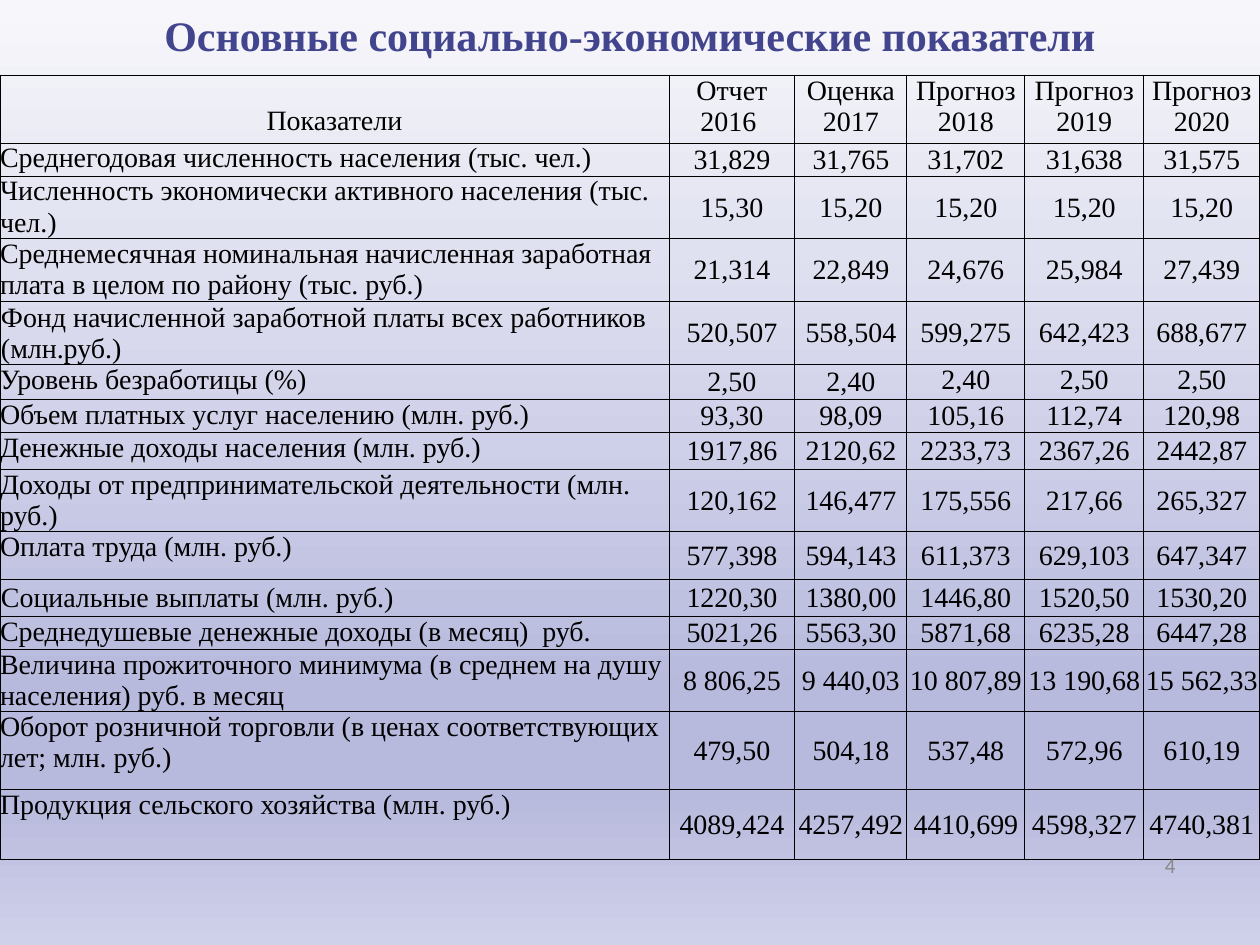
from lxml import etree
from pptx import Presentation
from pptx.dml.color import RGBColor
from pptx.enum.text import MSO_ANCHOR, MSO_AUTO_SIZE, PP_ALIGN
from pptx.oxml.ns import qn
from pptx.util import Pt

TOP, MIDDLE, BOTTOM = MSO_ANCHOR.TOP, MSO_ANCHOR.MIDDLE, MSO_ANCHOR.BOTTOM
LEFT, CENTER = PP_ALIGN.LEFT, PP_ALIGN.CENTER
PX = 914400 // 126
SERIF = "Times New Roman"
COLORS = {"title": "42458D", "text": "000000", "border": "000000", "number": "888888"}
BACKGROUND = [(0, "F7F7FB"), (74, "B7B9DD"), (83, "B7B9DD"), (100, "CFD0E9")]

HEADER = ["Показатели", "Отчет\n2016 ", "Оценка 2017", "Прогноз 2018", "Прогноз 2019", "Прогноз 2020"]
INDICATORS = [
    ("Среднегодовая численность населения (тыс. чел.)",
     "31,829", "31,765", "31,702", "31,638", "31,575"),
    ("Численность экономически активного населения (тыс. чел.)",
     "15,30", "15,20", "15,20", "15,20", "15,20"),
    ("Среднемесячная номинальная начисленная заработная плата в целом по району (тыс. руб.)",
     "21,314", "22,849", "24,676", "25,984", "27,439"),
    ("Фонд начисленной заработной платы всех работников (млн.руб.)",
     "520,507", "558,504", "599,275", "642,423", "688,677"),
    ("Уровень безработицы (%)", "2,50", "2,40", "2,40", "2,50", "2,50"),
    ("Объем платных услуг населению (млн. руб.)",
     "93,30", "98,09", "105,16", "112,74", "120,98"),
    ("Денежные доходы населения (млн. руб.)",
     "1917,86", "2120,62", "2233,73", "2367,26", "2442,87"),
    ("Доходы от предпринимательской деятельности (млн. руб.)",
     "120,162", "146,477", "175,556", "217,66", "265,327"),
    ("Оплата труда (млн. руб.)",
     "577,398", "594,143", "611,373", "629,103", "647,347"),
    ("Социальные выплаты (млн. руб.)",
     "1220,30", "1380,00", "1446,80", "1520,50", "1530,20"),
    ("Среднедушевые денежные доходы (в месяц)  руб.",
     "5021,26", "5563,30", "5871,68", "6235,28", "6447,28"),
    ("Величина прожиточного минимума (в среднем на душу населения) руб. в месяц",
     "8 806,25", "9 440,03", "10 807,89", "13 190,68", "15 562,33"),
    ("Оборот розничной торговли (в ценах соответствующих лет; млн. руб.)",
     "479,50", "504,18", "537,48", "572,96", "610,19"),
    ("Продукция сельского хозяйства (млн. руб.)",
     "4089,424", "4257,492", "4410,699", "4598,327", "4740,381"),
]
COLUMN_WIDTHS = [669, 126, 112, 118, 119, 116]
ROW_HEIGHTS = [68, 33, 62, 63, 62, 35, 33, 37, 62, 48, 37, 33, 62, 78, 70]
MIDDLE_LABEL_ROWS = (4, 10)
TOP_VALUES = [(5, 3), (5, 4), (5, 5)]


def style_text(frame, size, color, font, align, bold=False):
    for paragraph in frame.paragraphs:
        paragraph.alignment = align
        for run in paragraph.runs:
            run.font.size = Pt(size)
            run.font.name = font
            run.font.bold = bold
            run.font.color.rgb = RGBColor.from_string(COLORS[color])


def add_borders(cell):
    properties = cell._tc.get_or_add_tcPr()
    for side in ("a:lnL", "a:lnR", "a:lnT", "a:lnB"):
        line = etree.SubElement(properties, qn(side), w=str(Pt(0.5)))
        fill = etree.SubElement(line, qn("a:solidFill"))
        etree.SubElement(fill, qn("a:srgbClr"), val=COLORS["border"])


prs = Presentation()
prs.slide_width, prs.slide_height = 1260 * PX, 945 * PX
slide = prs.slides.add_slide(prs.slide_layouts[5])

background = slide.background.fill
background.gradient()
background.gradient_angle = 270
stops = slide.background._cSld.find(".//" + qn("a:gsLst"))
for stop in list(stops):
    stops.remove(stop)
for position, color in BACKGROUND:
    stop = etree.SubElement(stops, qn("a:gs"), pos=str(position * 1000))
    etree.SubElement(stop, qn("a:srgbClr"), val=color)

title = slide.shapes.title
title.left, title.top, title.width, title.height = 0, 3 * PX, 1260 * PX, 114 * PX
title.text_frame.text = "Основные социально-экономические показатели"
title.text_frame.auto_size = MSO_AUTO_SIZE.NONE
title.text_frame.vertical_anchor = TOP
style_text(title.text_frame, 24, "title", SERIF, CENTER, bold=True)

table = slide.shapes.add_table(
    len(ROW_HEIGHTS), len(COLUMN_WIDTHS), 0, 75 * PX,
    sum(COLUMN_WIDTHS) * PX, sum(ROW_HEIGHTS) * PX).table
table.first_row = False
table.horz_banding = False
for column, width in zip(table.columns, COLUMN_WIDTHS):
    column.width = width * PX
for row, height in zip(table.rows, ROW_HEIGHTS):
    row.height = height * PX

for r, values in enumerate([HEADER] + INDICATORS):
    for c, value in enumerate(values):
        cell = table.cell(r, c)
        cell.text_frame.text = value
        is_label = c == 0 and r > 0
        style_text(cell.text_frame, 16, "text", SERIF, LEFT if is_label else CENTER)
        if is_label:
            centered = r in MIDDLE_LABEL_ROWS
        else:
            centered = r > 0 and (r, c) not in TOP_VALUES
        cell.vertical_anchor = MIDDLE if centered else TOP
        inset = PX if centered else 0
        cell.margin_left = cell.margin_right = cell.margin_top = inset
        cell.margin_bottom = 0
        add_borders(cell)
        cell.fill.background()

corner = table.cell(0, 0)
corner.vertical_anchor = BOTTOM
corner.margin_bottom = 6 * PX

page_number = slide.shapes.add_textbox(1138 * PX, 842 * PX, 59 * PX, 50 * PX).text_frame
page_number.word_wrap = True
page_number.vertical_anchor = MIDDLE
page_number.margin_left = 27 * PX
page_number.text = "4"
page_number.paragraphs[0].line_spacing = Pt(12.4)
style_text(page_number, 12, "number", "Calibri", LEFT)

prs.save("out.pptx")
